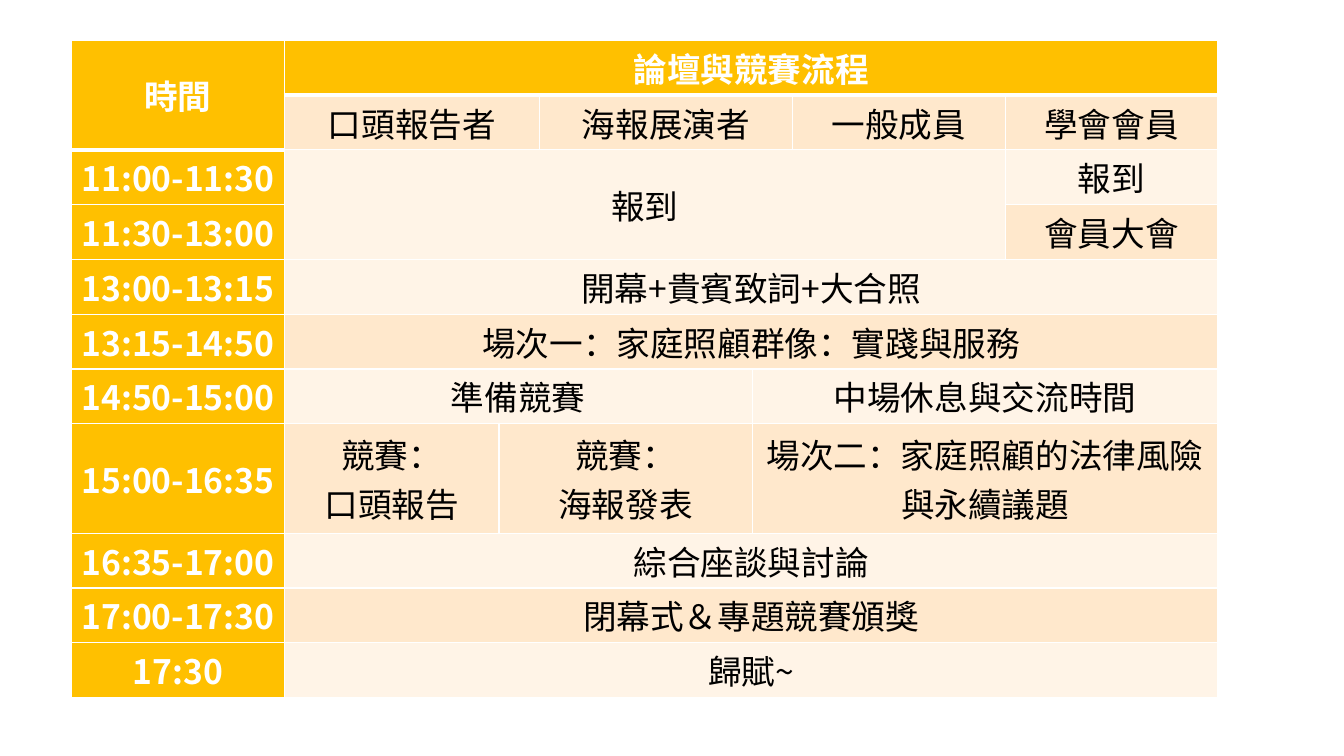
from lxml.etree import SubElement
from pptx import Presentation
from pptx.dml.color import RGBColor
from pptx.enum.text import MSO_ANCHOR, PP_ALIGN
from pptx.oxml.ns import qn
from pptx.util import Inches, Pt

FONT = "Noto Sans CJK SC"
GOLD, PEACH, CREAM = "FFC000", "FFE8CC", "FFF4E7"
WHITE, BLACK = "FFFFFF", "000000"

COLUMN_WIDTHS = [2.11, 2.13, 0.4, 2.11, 0.4, 2.11, 2.11]
ROW_UNITS = [1, 1, 1, 1, 1, 1, 1, 2, 1, 1, 1]
LEFT, TOP, HEIGHT = 0.71, 0.4, 6.52

# Headings and times: (row, column, rows spanned, columns spanned, text)
HEADINGS = [(0, 0, 2, 1, "時間"), (0, 1, 1, 6, "論壇與競賽流程")]
TIMES = [
    "11:00-11:30", "11:30-13:00", "13:00-13:15", "13:15-14:50", "14:50-15:00",
    "15:00-16:35", "16:35-17:00", "17:00-17:30", "17:30",
]
HEADINGS += [(row, 0, 1, 1, time) for row, time in enumerate(TIMES, start=2)]

# Programme: same fields as the headings
PROGRAMME = [
    (1, 1, 1, 2, "口頭報告者"),
    (1, 3, 1, 2, "海報展演者"),
    (1, 5, 1, 1, "一般成員"),
    (1, 6, 1, 1, "學會會員"),
    (2, 1, 2, 5, "報到"),
    (2, 6, 1, 1, "報到"),
    (3, 6, 1, 1, "會員大會"),
    (4, 1, 1, 6, "開幕+貴賓致詞+大合照"),
    (5, 1, 1, 6, "場次一：家庭照顧群像：實踐與服務"),
    (6, 1, 1, 3, "準備競賽"),
    (6, 4, 1, 3, "中場休息與交流時間"),
    (7, 1, 1, 1, "競賽：\n口頭報告"),
    (7, 2, 1, 2, "競賽：\n海報發表"),
    (7, 4, 1, 3, "場次二：家庭照顧的法律風險與永續議題"),
    (8, 1, 1, 6, "綜合座談與討論"),
    (9, 1, 1, 6, "閉幕式＆專題競賽頒獎"),
    (10, 1, 1, 6, "歸賦~"),
]


def color(value):
    return RGBColor.from_string(value)


def add_borders(cell, top, bottom):
    """Draw white cell edges; top and bottom are widths in points."""
    properties = cell._tc.get_or_add_tcPr()
    for edge, width in (("L", 1), ("R", 1), ("T", top), ("B", bottom)):
        line = SubElement(properties, qn(f"a:ln{edge}"), w=str(Pt(width)))
        fill = SubElement(line, qn("a:solidFill"))
        SubElement(fill, qn("a:srgbClr"), val=WHITE)


def fill_cell(cell, text, fill, ink, bold):
    cell.fill.solid()
    cell.fill.fore_color.rgb = color(fill)
    cell.vertical_anchor = MSO_ANCHOR.MIDDLE
    cell.margin_left = cell.margin_right = Inches(0.07)
    cell.margin_top = cell.margin_bottom = 0
    cell.text_frame.text = text
    for paragraph in cell.text_frame.paragraphs:
        paragraph.alignment = PP_ALIGN.CENTER
        for run in paragraph.runs:
            run.font.name = FONT
            run.font.size = Pt(24)
            run.font.bold = bold
            run.font.color.rgb = color(ink)
            SubElement(run._r.get_or_add_rPr(), qn("a:ea"), typeface=FONT)


def main():
    presentation = Presentation()
    presentation.slide_width = Inches(13.33)
    presentation.slide_height = Inches(7.5)
    slide = presentation.slides.add_slide(presentation.slide_layouts[6])

    schedule = slide.shapes.add_table(
        len(ROW_UNITS), len(COLUMN_WIDTHS), Inches(LEFT), Inches(TOP),
        Inches(sum(COLUMN_WIDTHS)), Inches(HEIGHT),
    ).table
    schedule.horz_banding = False
    for column, width in zip(schedule.columns, COLUMN_WIDTHS):
        column.width = Inches(width)
    for row, units in zip(schedule.rows, ROW_UNITS):
        row.height = Inches(HEIGHT * units / sum(ROW_UNITS))

    for row in range(len(ROW_UNITS)):
        for column in range(len(COLUMN_WIDTHS)):
            last_heading_row = 1 if column == 0 else 0
            add_borders(
                schedule.cell(row, column),
                top=3 if row == last_heading_row + 1 else 1,
                bottom=3 if row <= last_heading_row else 1,
            )

    for row, column, rows, columns, text in HEADINGS + PROGRAMME:
        cell = schedule.cell(row, column)
        if rows * columns > 1:
            cell.merge(schedule.cell(row + rows - 1, column + columns - 1))
        if row == 0 or column == 0:
            fill_cell(cell, text, GOLD, WHITE, True)
        else:
            fill_cell(cell, text, PEACH if row % 2 else CREAM, BLACK, False)

    presentation.save("out.pptx")


if __name__ == "__main__":
    main()
